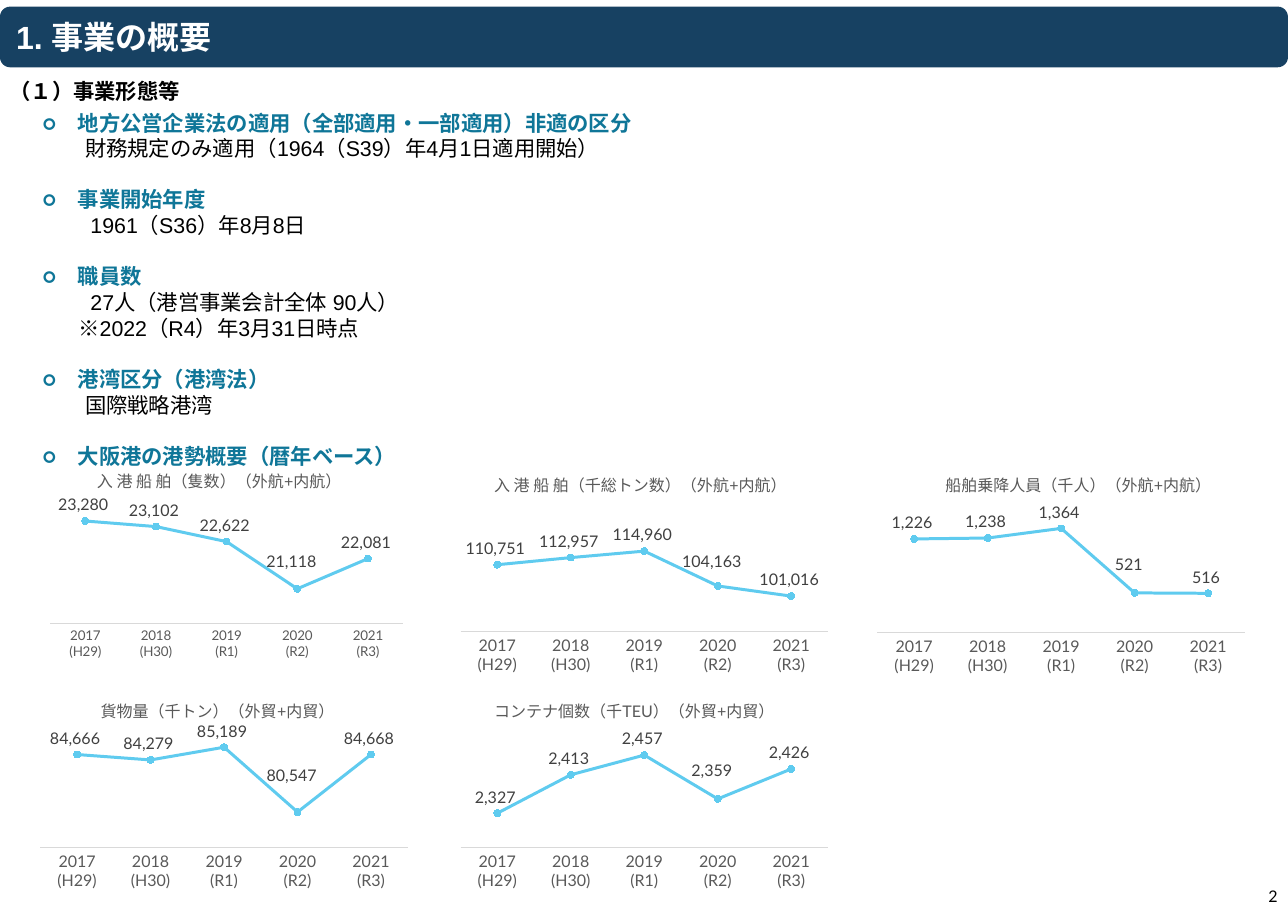
from dataclasses import dataclass

from lxml.etree import SubElement
from pptx import Presentation
from pptx.chart.chart import Chart
from pptx.chart.data import CategoryChartData
from pptx.dml.color import RGBColor
from pptx.enum.chart import XL_CHART_TYPE, XL_LABEL_POSITION, XL_MARKER_STYLE, XL_TICK_MARK
from pptx.enum.shapes import MSO_SHAPE
from pptx.enum.text import MSO_ANCHOR, MSO_AUTO_SIZE, PP_ALIGN
from pptx.oxml import parse_xml
from pptx.oxml.ns import nsdecls, qn
from pptx.util import Pt

COLORS = {
    "banner": "174162",
    "heading": "0F7698",
    "text": "000000",
    "white": "FFFFFF",
    "line": "5FCBEF",
    "label": "404040",
    "axis_text": "595959",
    "axis_line": "D9D9D9",
}
NUMBER_FORMAT = r"#,##0_);[Red]\(#,##0\)"
YEARS = ["2017\n(H29)", "2018\n(H30)", "2019\n(R1)", "2020\n(R2)", "2021\n(R3)"]
LINE_HEIGHT = 19.2
CHART_WIDTH = 286.5
BANNER_BOX = (0, 5, 964, 45.4)


@dataclass
class Line:
    text: str
    indent: float = 32
    heading: bool = False


@dataclass
class PortChart:
    title: str
    values: list[int]
    box: tuple[float, float, float]  # left, top, height
    scale: tuple[int, int]
    title_at: tuple[float, float]  # fractions of the chart
    plot: tuple[float, float, float, float]  # left, top, width, height fractions
    label_shift: float  # upward move of the 2020 label
    axis_size: float = 12


LINES = [
    Line("○　地方公営企業法の適用（全部適用・一部適用）非適の区分", 0, True),
    Line("財務規定のみ適用（1964（S39）年4月1日適用開始）"),
    Line("○　事業開始年度", 0, True),
    Line("1961（S36）年8月8日", 36),
    Line("○　職員数", 0, True),
    Line("27人（港営事業会計全体 90人）", 36),
    Line("　※2022（R4）年3月31日時点", 11),
    Line("○　港湾区分（港湾法）", 0, True),
    Line("国際戦略港湾"),
    Line("○　大阪港の港勢概要（暦年ベース）", 0, True),
]
LOWER_PLOT = (0.02, 0.235, 0.96, 0.546)
CHARTS = [
    PortChart("入 港 船 舶（隻数）（外航+内航）", [23280, 23102, 22622, 21118, 22081],
              (27.4, 345.6, 153.4), (20000, 23500), (0.15, 0.01),
              (0.035, 0.256, 0.923, 0.536), 0.055, 10),
    PortChart("入 港 船 舶（千総トン数）（外航+内航）", [110751, 112957, 114960, 104163, 101016],
              (339, 347, 161.3), (90000, 120000), (0.1, 0.02),
              (0.02, 0.331, 0.96, 0.45), 0.04),
    PortChart("船舶乗降人員（千人）（外航+内航）", [1226, 1238, 1364, 521, 516],
              (651, 347, 161.3), (0, 1600), (0.19, 0.02),
              (0.02, 0.217, 0.96, 0.569), 0.055),
    PortChart("貨物量（千トン）（外貿+内貿）", [84666, 84279, 85189, 80547, 84668],
              (24.5, 514.8, 153.4), (78000, 86000), (0.17, 0.03), LOWER_PLOT, 0.1),
    PortChart("コンテナ個数（千TEU）（外貿+内貿）", [2327, 2413, 2457, 2359, 2426],
              (339, 514.8, 153.4), (2250, 2500), (0.1, 0.03), LOWER_PLOT, 0.06),
]


def color(name: str) -> RGBColor:
    return RGBColor.from_string(COLORS[name])


def style(font, size: float, tint: str, face: str = "Lato", bold: bool = False) -> None:
    font.size, font.name, font.bold = Pt(size), face, bold
    font.color.rgb = color(tint)


def place(shape, left: float, top: float, width: float, height: float) -> None:
    shape.left, shape.top, shape.width, shape.height = map(Pt, (left, top, width, height))


def set_layout(parent, index: int, **fractions: float) -> None:
    """Give a chart part a manual layout as its child number index."""
    for old in parent.findall(qn("c:layout")):
        parent.remove(old)
    layout = parse_xml(f"<c:layout {nsdecls('c')}><c:manualLayout/></c:layout>")
    manual = layout[0]
    if "w" in fractions:
        SubElement(manual, qn("c:layoutTarget")).set("val", "inner")
    if parent.tag != qn("c:dLbl"):
        for mode in ("xMode", "yMode"):
            SubElement(manual, qn(f"c:{mode}")).set("val", "edge")
    for name, value in fractions.items():
        SubElement(manual, qn(f"c:{name}")).set("val", str(value))
    parent.insert(index, layout)


def add_banner(page) -> None:
    banner = page.shapes.add_shape(MSO_SHAPE.ROUNDED_RECTANGLE, *map(Pt, BANNER_BOX))
    banner.shadow.inherit = False
    banner.fill.solid()
    banner.fill.fore_color.rgb = color("banner")
    banner.line.fill.background()
    title = page.shapes.title
    title._element.addprevious(banner._element)
    place(title, *BANNER_BOX)
    frame = title.text_frame
    frame.text = "1. 事業の概要"
    frame.auto_size = MSO_AUTO_SIZE.NONE
    frame.vertical_anchor = MSO_ANCHOR.MIDDLE
    frame.margin_left = frame.margin_right = Pt(12)
    para = frame.paragraphs[0]
    para.alignment = PP_ALIGN.LEFT
    style(para.font, 24, "white", "Arial", True)


def add_overview(page) -> None:
    body = page.placeholders[1]
    place(body, 24.5, 78.5, 870.5, 278.6)
    frame = body.text_frame
    frame.auto_size = MSO_AUTO_SIZE.NONE
    frame.vertical_anchor = MSO_ANCHOR.TOP
    for number, line in enumerate(LINES):
        para = frame.add_paragraph() if number else frame.paragraphs[0]
        para.text = line.text
        para.line_spacing = Pt(LINE_HEIGHT)
        para.space_before = Pt(LINE_HEIGHT if line.heading and number else 0)
        properties = para._p.get_or_add_pPr()
        properties.set("marL", str(Pt(line.indent)))
        properties.set("indent", "0")
        SubElement(properties, qn("a:buNone"))
        if line.heading:
            style(para.font, 16, "heading", bold=True)
            SubElement(properties.find(qn("a:defRPr")), qn("a:ea")).set("typeface", "Lato")
        else:
            style(para.font, 16, "text", "Arial")


def add_label(page, text: str, box: tuple, size: float, bold: bool, align: PP_ALIGN) -> None:
    label = page.shapes.add_textbox(*map(Pt, box))
    frame = label.text_frame
    frame.text, frame.word_wrap = text, True
    frame.vertical_anchor = MSO_ANCHOR.MIDDLE
    para = frame.paragraphs[0]
    para.alignment = align
    style(para.font, size, "text", bold=bold)


def style_axes(chart: Chart, item: PortChart) -> None:
    years = chart.category_axis
    years.major_tick_mark = years.minor_tick_mark = XL_TICK_MARK.NONE
    years.has_major_gridlines = False
    years.format.line.color.rgb = color("axis_line")
    years.format.line.width = Pt(0.75)
    style(years.tick_labels.font, item.axis_size, "axis_text")
    amounts = chart.value_axis
    amounts.visible = amounts.has_major_gridlines = False
    amounts.minimum_scale, amounts.maximum_scale = item.scale


def hide_leader_lines(labels) -> None:
    for flag in labels.findall(qn("c:showLeaderLines")):
        flag.set("val", "0")
    labels.append(parse_xml(
        f'<c:extLst {nsdecls("c")}><c:ext uri="{{CE6537A1-D6FC-4f65-9D91-7224C49458BB}}" '
        'xmlns:c15="http://schemas.microsoft.com/office/drawing/2012/chart">'
        '<c15:showLeaderLines val="0"/></c:ext></c:extLst>'))


def style_series(chart: Chart, item: PortChart) -> None:
    series = chart.plots[0].series[0]
    series.smooth = False
    series.format.line.color.rgb = color("line")
    series.format.line.width = Pt(2.25)
    series.marker.style, series.marker.size = XL_MARKER_STYLE.CIRCLE, 5
    series.marker.format.fill.solid()
    series.marker.format.fill.fore_color.rgb = color("line")
    series.marker.format.line.color.rgb = color("line")
    labels = series.data_labels
    labels.show_value = True
    labels.number_format, labels.number_format_is_linked = NUMBER_FORMAT, False
    moved = series.points[3].data_label
    for label in (labels, moved):
        label.position = XL_LABEL_POSITION.ABOVE
        style(label.font, 12, "label")
    set_layout(labels._element.find(qn("c:dLbl")), 1, x=-0.01, y=-item.label_shift)
    hide_leader_lines(labels._element)


def add_port_chart(page, item: PortChart) -> None:
    data = CategoryChartData(number_format=NUMBER_FORMAT)
    data.categories = YEARS
    data.add_series("Series 1", item.values)
    left, top, height = item.box
    chart = page.shapes.add_chart(XL_CHART_TYPE.LINE_MARKERS, Pt(left), Pt(top),
                                  Pt(CHART_WIDTH), Pt(height), data).chart
    style(chart.font, 10, "text")
    chart.has_legend = False
    chart.plots[0].vary_by_categories = False
    chart.has_title = True
    title = chart.chart_title
    title.text_frame.text = item.title
    style(title.text_frame.paragraphs[0].font, 12, "axis_text")
    set_layout(title._element, 1, x=item.title_at[0], y=item.title_at[1])
    set_layout(chart._chartSpace.chart.plotArea, 0, **dict(zip("xywh", item.plot)))
    style_axes(chart, item)
    style_series(chart, item)


def main() -> None:
    deck = Presentation()
    deck.slide_width, deck.slide_height = Pt(964), Pt(680.4)
    page = deck.slides.add_slide(deck.slide_layouts[1])
    add_banner(page)
    add_overview(page)
    add_label(page, "2", (909.4, 661, 54, 19.4), 12, False, PP_ALIGN.RIGHT)
    add_label(page, "（１）事業形態等", (0, 54.7, 165, 26.6), 16, True, PP_ALIGN.LEFT)
    for item in CHARTS:
        add_port_chart(page, item)
    deck.save("out.pptx")


if __name__ == "__main__":
    main()
